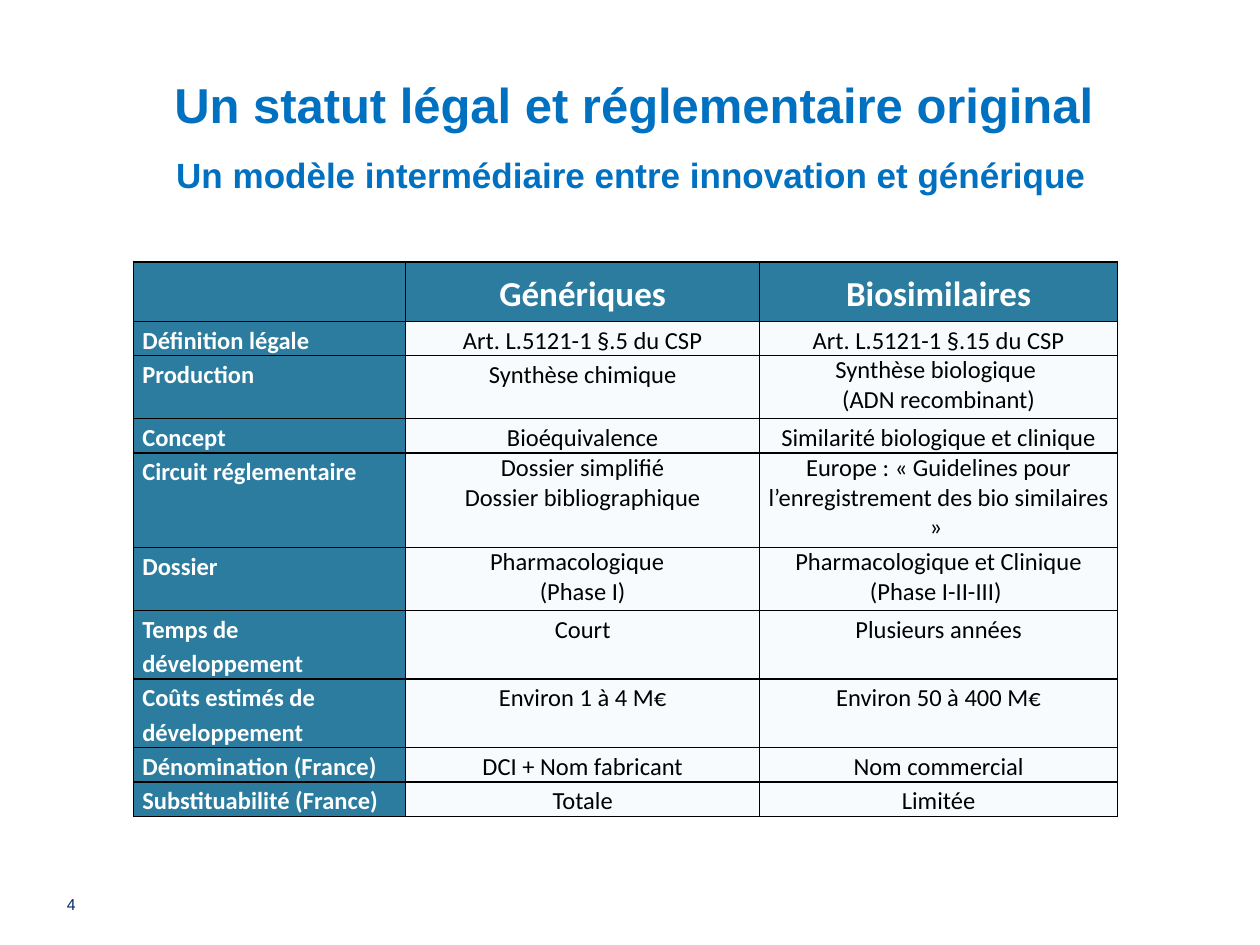
from pptx import Presentation
from pptx.dml.color import RGBColor
from pptx.enum.text import MSO_ANCHOR, MSO_AUTO_SIZE, PP_ALIGN
from pptx.oxml import parse_xml
from pptx.oxml.ns import nsdecls
from pptx.util import Inches, Pt

CENTER, LEFT = PP_ALIGN.CENTER, PP_ALIGN.LEFT
TOP, MIDDLE, BOTTOM = MSO_ANCHOR.TOP, MSO_ANCHOR.MIDDLE, MSO_ANCHOR.BOTTOM
COLORS = {"heading": "0070C0", "number": "002868", "label": "2C7C9F",
          "value": "F7FBFD", "white": "FFFFFF", "black": "000000"}
COLUMN_WIDTHS = [2.16, 2.81, 2.84]
ROW_HEIGHTS = [0.47, 0.25, 0.5, 0.25, 0.75, 0.5, 0.25, 0.5, 0.25, 0.25]
# "\n" separates paragraphs, "\v" breaks a line inside one.
ROWS = [
    ("", "Génériques", "Biosimilaires"),
    ("Définition légale", "Art. L.5121-1 §.5 du CSP", "Art. L.5121-1 §.15 du CSP"),
    ("Production", "Synthèse chimique", "Synthèse biologique \v(ADN recombinant)"),
    ("Concept", "Bioéquivalence", "Similarité biologique et clinique"),
    ("Circuit réglementaire", "Dossier simplifié\nDossier bibliographique",
     "Europe : « Guidelines pour l’enregistrement des bio similaires » "),
    ("Dossier", "Pharmacologique  \n(Phase I)",
     "Pharmacologique et Clinique (Phase I-II-III) "),
    ("Temps de développement", "Court", "Plusieurs années"),
    ("Coûts estimés de développement", "Environ 1 à 4 M€", "Environ 50 à 400 M€"),
    ("Dénomination (France)", "DCI + Nom fabricant", "Nom commercial"),
    ("Substituabilité (France)", "Totale", "Limitée"),
]
SINGLE_SPACED = {(2, 2), (4, 1), (4, 2), (5, 1), (5, 2)}


def format_paragraph(paragraph, size, color, name="Arial", bold=False, align=LEFT):
    paragraph.alignment = align
    font = paragraph.font
    font.size, font.name, font.bold = Pt(size), name, bold
    font.color.rgb = RGBColor.from_string(COLORS[color])


def place(shape, left, top, width, height):
    shape.left, shape.top = Inches(left), Inches(top)
    shape.width, shape.height = Inches(width), Inches(height)


def fill_heading(placeholder, box, text, size, anchor):
    place(placeholder, *box)
    frame = placeholder.text_frame
    frame.text = text
    frame.auto_size = MSO_AUTO_SIZE.NONE
    frame.vertical_anchor = anchor
    paragraph = frame.paragraphs[0]
    format_paragraph(paragraph, size, "heading", bold=True, align=CENTER)
    return paragraph


def add_subtitle(placeholder, box, text):
    paragraph = fill_heading(placeholder, box, text, 20, TOP)
    paragraph.space_before = Pt(20)
    properties = paragraph._p.get_or_add_pPr()
    properties.set("marL", "0")
    properties.set("indent", "0")
    bullet = parse_xml(f"<a:buNone {nsdecls('a')}/>")
    properties.find("{*}defRPr").addprevious(bullet)


def set_borders(cell):
    properties = cell._tc.get_or_add_tcPr()
    for index, side in enumerate(("lnL", "lnR", "lnT", "lnB")):
        properties.insert(index, parse_xml(
            f'<a:{side} {nsdecls("a")} w="{Pt(1)}"><a:solidFill>'
            f'<a:srgbClr val="{COLORS["black"]}"/></a:solidFill></a:{side}>'))


def fill_cell(cell, text, row, column):
    header, label = row == 0, column == 0
    cell.margin_left = cell.margin_right = Inches(0.07)
    cell.margin_top = cell.margin_bottom = 0
    cell.vertical_anchor = MIDDLE if header else TOP
    cell.fill.solid()
    fill = "label" if header or label else "value"
    cell.fill.fore_color.rgb = RGBColor.from_string(COLORS[fill])
    set_borders(cell)
    cell.text = text
    for paragraph in cell.text_frame.paragraphs:
        format_paragraph(paragraph, 20 if header else 14,
                         "white" if header or label else "black", "Calibri",
                         header or label, LEFT if label else CENTER)
        if (row, column) not in SINGLE_SPACED:
            paragraph.line_spacing = 1.15


def add_comparison_table(slide, left, top):
    table = slide.shapes.add_table(
        len(ROWS), len(COLUMN_WIDTHS), Inches(left), Inches(top),
        Inches(sum(COLUMN_WIDTHS)), Inches(sum(ROW_HEIGHTS))).table
    table.first_row = table.horz_banding = False
    for column, width in zip(table.columns, COLUMN_WIDTHS):
        column.width = Inches(width)
    for row, (height, texts) in enumerate(zip(ROW_HEIGHTS, ROWS)):
        table.rows[row].height = Inches(height)
        for column, text in enumerate(texts):
            fill_cell(table.cell(row, column), text, row, column)


def add_page_number(slide, box, text):
    frame = slide.shapes.add_textbox(*map(Inches, box)).text_frame
    frame.margin_left = frame.margin_right = frame.margin_top = frame.margin_bottom = 0
    frame.word_wrap = True
    frame.text = text
    format_paragraph(frame.paragraphs[0], 9, "number")


def main():
    presentation = Presentation()
    presentation.slide_width, presentation.slide_height = Inches(10), Inches(7.5)
    slide = presentation.slides.add_slide(presentation.slide_layouts[1])
    fill_heading(slide.shapes.title, (0.53, 0.21, 9, 0.9),
                 "Un statut légal et réglementaire original", 28, BOTTOM)
    add_subtitle(slide.placeholders[1], (0.51, 1.17, 9, 0.49),
                 "Un modèle intermédiaire entre innovation et générique")
    add_comparison_table(slide, 1.06, 2.08)
    add_page_number(slide, (0.53, 7.1, 0.25, 0.15), "4")
    presentation.save("out.pptx")


if __name__ == "__main__":
    main()
